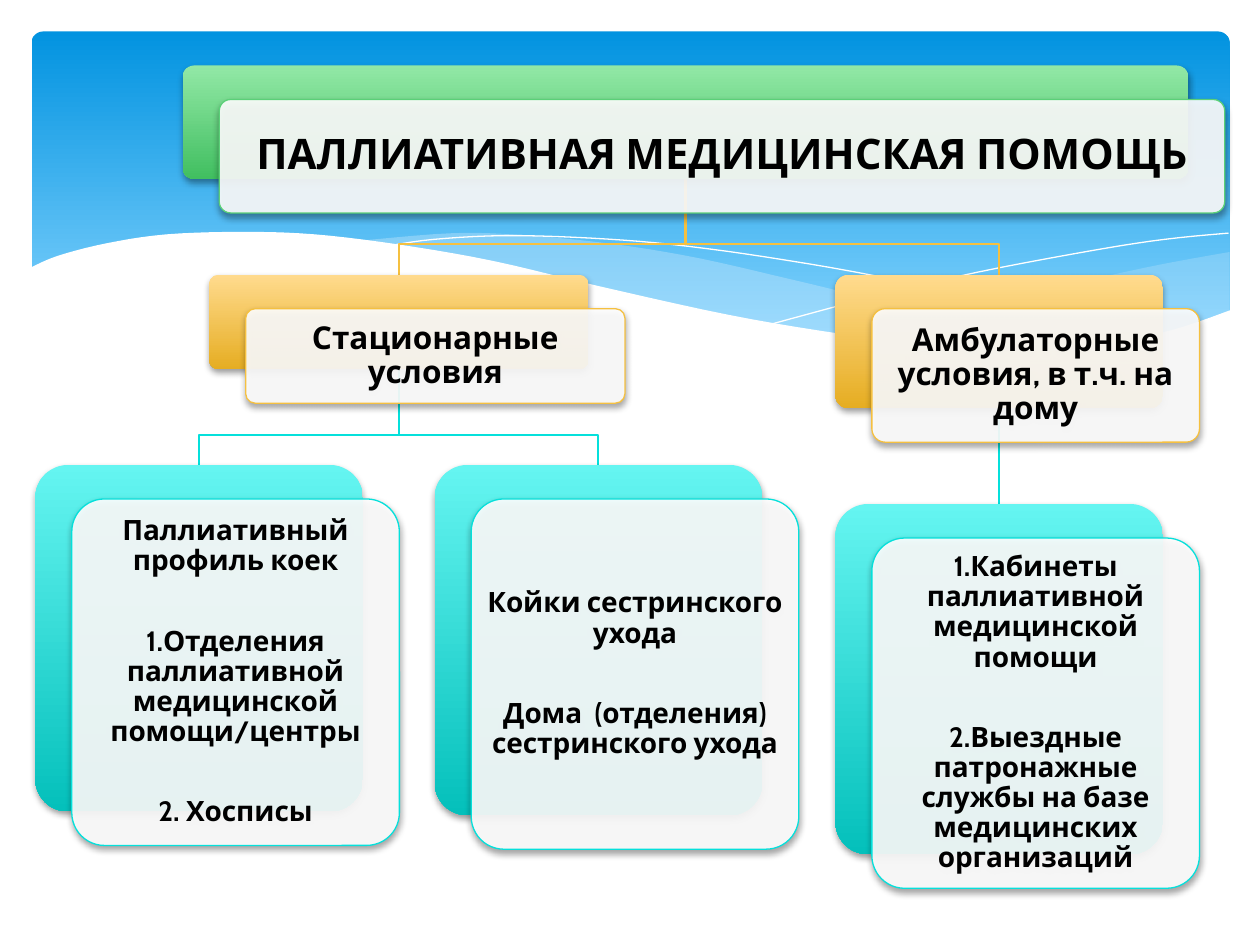
"""Build a one-slide chart of the kinds of palliative medical care."""
import pptx
import pptx.dml.color
import pptx.enum.shapes
import pptx.enum.text
import pptx.oxml
import pptx.oxml.ns
import pptx.util

Inches = pptx.util.Inches
Pt = pptx.util.Pt
RGBColor = pptx.dml.color.RGBColor
ROUNDED = pptx.enum.shapes.MSO_SHAPE.ROUNDED_RECTANGLE

WHITE = RGBColor(0xFF, 0xFF, 0xFF)
BLACK = RGBColor(0, 0, 0)
MIST = RGBColor(0xC6, 0xE7, 0xFC)
SKY = (RGBColor(0x02, 0x93, 0xE0), RGBColor(0x83, 0xD3, 0xFE))
GREEN = (RGBColor(0x92, 0xE8, 0xA6), RGBColor(0x41, 0xBF, 0x60), RGBColor(0x5B, 0xD0, 0x78))
GOLD = (RGBColor(0xFF, 0xDB, 0x8E), RGBColor(0xE6, 0xAD, 0x22), RGBColor(0xF5, 0xC0, 0x40))
TEAL = (RGBColor(0x65, 0xF5, 0xF1), RGBColor(0x04, 0xC0, 0xBB), RGBColor(0x05, 0xE0, 0xDB))
FONT = "Cabin"
CARD_OFFSET = (0.29, 0.27)
BEND_GAP = 0.24

TITLE = "ПАЛЛИАТИВНАЯ МЕДИЦИНСКАЯ ПОМОЩЬ"
CARDS = {
    "root": ((1.45, 0.52, 7.98, 0.9), GREEN, 24, []),
    "inpatient": ((1.66, 2.18, 3.01, 0.75), GOLD, 18, ["Стационарные условия"]),
    "beds": ((0.28, 3.69, 2.6, 2.75), TEAL, 16, [
        "Паллиативный профиль коек",
        "1.Отделения паллиативной медицинской помощи/центры",
        "2. Хосписы"]),
    "nursing": ((3.45, 3.69, 2.6, 2.78), TEAL, 16, [
        "Койки сестринского ухода",
        "Дома  (отделения) сестринского ухода"]),
    "outpatient": ((6.63, 2.18, 2.6, 1.06), GOLD, 18, ["Амбулаторные условия, в т.ч. на дому"]),
    "home": ((6.63, 4, 2.6, 2.78), TEAL, 16, [
        "1.Кабинеты паллиативной медицинской помощи",
        "2.Выездные патронажные службы на базе медицинских организаций"]),
}
LINKS = [("outpatient", "home"), ("root", "outpatient"), ("inpatient", "nursing"),
         ("inpatient", "beds"), ("root", "inpatient")]

RIGHT_WAVE = [
    [(9.76, 2), (9.21, 2.1), (8.61, 2.23), (7.79, 2.42), (7.06, 2.57), (6.61, 2.65)],
    [(6.61, 2.65), (7.05, 2.71), (7.57, 2.76), (8.14, 2.78), (8.72, 2.74), (9.28, 2.63), (9.76, 2.47)],
]
MIDDLE_WAVE = [
    [(8.93, 2.73), (8.07, 2.6), (7.06, 2.4), (6.29, 2.22), (5.55, 2.05), (4.89, 1.94),
     (4.2, 1.87), (3.61, 1.85), (2.86, 1.91)],
    [(2.86, 1.91), (3.62, 2.03), (4.49, 2.22), (5.3, 2.4), (6.18, 2.58), (6.95, 2.7),
     (7.61, 2.77), (8.18, 2.78), (8.93, 2.73)],
]
LONG_LINE = [(3.09, 1.95), (3.44, 1.9), (4.01, 1.87), (4.69, 1.89), (5.33, 1.94), (6.08, 2.04),
             (6.95, 2.19), (7.95, 2.41), (9.07, 2.72)]
SHORT_LINE = [(6.13, 2.57), (6.95, 2.35), (7.76, 2.16), (8.66, 1.99), (9.24, 1.9), (9.75, 1.85)]
PAGE_EDGE = [
    [(9.77, 2.46), (9.3, 2.62), (8.75, 2.73), (8.09, 2.77), (7.44, 2.74), (6.68, 2.65), (5.79, 2.5),
     (4.75, 2.27), (3.91, 2.07), (3.16, 1.94), (2.5, 1.86), (1.93, 1.84), (1.32, 1.86), (0.85, 1.93),
     (0.46, 2.03), (0.23, 2.13)],
    [(0.23, 3.29), (9.77, 3.29)],
]


def smooth_curve(points, steps=5):
    """Return points along a Catmull-Rom curve through the given points."""
    ends = [points[0], *points, points[-1]]
    curve = [points[0]]
    for a, b, c, d in zip(ends, ends[1:], ends[2:], ends[3:]):
        for step in range(1, steps + 1):
            t = step / steps
            curve.append(tuple(
                0.5 * (2 * q + (r - p) * t + (2 * p - 5 * q + 4 * r - s) * t ** 2
                       + (3 * q - p - 3 * r + s) * t ** 3)
                for p, q, r, s in zip(a, b, c, d)))
    return curve


def set_alpha(fill_parent, percent):
    """Make the first solid colour below an element partly transparent."""
    color = fill_parent.find(".//" + pptx.oxml.ns.qn("a:srgbClr"))
    color.append(pptx.oxml.parse_xml(
        f'<a:alpha {pptx.oxml.ns.nsdecls("a")} val="{percent * 1000}"/>'))


def add_outline(page, points, fill=None, alpha=100, line=None, width=0):
    """Draw a filled area or an open line through the points."""
    spots = [(Inches(x), Inches(y)) for x, y in points]
    builder = page.shapes.build_freeform(*spots[0])
    builder.add_line_segments(spots[1:], close=fill is not None)
    shape = builder.convert_to_shape()
    shape.shadow.inherit = False
    if fill is None:
        shape.fill.background()
        shape.line.color.rgb = line
        shape.line.width = Pt(width)
    else:
        shape.fill.solid()
        shape.fill.fore_color.rgb = fill
        set_alpha(shape.element.spPr, alpha)
        shape.line.fill.background()
    return shape


def add_panel(page, place, rounding, colors=None, last_stop=1.0):
    """Draw a rounded rectangle with a vertical gradient, or plain if no colours."""
    shape = page.shapes.add_shape(ROUNDED, *map(Inches, place))
    shape.adjustments[0] = rounding
    shape.shadow.inherit = False
    if colors:
        shape.fill.gradient()
        shape.fill.gradient_angle = 270
        for stop, color, position in zip(shape.fill.gradient_stops, colors, (0, last_stop)):
            stop.color.rgb = color
            stop.position = position
        shape.line.fill.background()
    return shape


def add_shadow(shape):
    effects = shape.element.spPr.find(pptx.oxml.ns.qn("a:effectLst"))
    effects.append(pptx.oxml.parse_xml(
        f'<a:outerShdw {pptx.oxml.ns.nsdecls("a")} blurRad="50800" dist="25400" dir="5400000" '
        'rotWithShape="0"><a:srgbClr val="000000"><a:alpha val="38000"/></a:srgbClr></a:outerShdw>'))


def write_text(shape, lines, size, inset):
    """Put centred bold paragraphs in a shape."""
    frame = shape.text_frame
    frame.text = "\n".join(lines)
    frame.word_wrap = True
    frame.auto_size = pptx.enum.text.MSO_AUTO_SIZE.NONE
    frame.vertical_anchor = pptx.enum.text.MSO_ANCHOR.MIDDLE
    frame.margin_left = frame.margin_right = frame.margin_top = frame.margin_bottom = Inches(inset)
    for index, para in enumerate(frame.paragraphs):
        para.alignment = pptx.enum.text.PP_ALIGN.CENTER
        para.line_spacing = 0.9
        para.space_before = Pt(28.5 if index else 0)
        for span in para.runs:
            span.font.name, span.font.size, span.font.bold = FONT, Pt(size), True
            span.font.color.rgb = BLACK


def add_card(page, place, colors, size, lines):
    """Draw a coloured card with a translucent text card over it; return both."""
    left, top, width, height = place
    back = add_panel(page, place, 0.1, colors[:2])
    front = add_panel(page, (left + CARD_OFFSET[0], top + CARD_OFFSET[1], width, height), 0.1)
    front.fill.solid()
    front.fill.fore_color.rgb = WHITE
    set_alpha(front.element.spPr, 90)
    front.line.color.rgb = colors[2]
    front.line.width = Pt(0.75)
    add_shadow(back)
    add_shadow(front)
    if lines:
        write_text(front, lines, size, max(0, 0.07 - 0.03 * min(width, height)))
    return back, front


def add_link(page, cards, parent, child):
    """Join the bottom of a parent card to the top of a child card."""
    (left, top, width, height), (child_left, child_top, child_width, _) = CARDS[parent][0], CARDS[child][0]
    start, end = (left + width / 2, top + height), (child_left + child_width / 2, child_top)
    color = CARDS[child][1][2]
    if start[0] == end[0]:
        link = page.shapes.add_connector(pptx.enum.shapes.MSO_CONNECTOR.STRAIGHT, 0, 0, 0, 0)
        link.begin_connect(cards[parent][0], 2)
        link.end_connect(cards[child][0], 0)
        link.line.color.rgb = color
        link.line.width = Pt(1.25)
        link.element.spPr.append(pptx.oxml.parse_xml(f'<a:effectLst {pptx.oxml.ns.nsdecls("a")}/>'))
    else:
        bend = child_top - BEND_GAP
        link = add_outline(page, [start, (start[0], bend), (end[0], bend), end], line=color, width=1.25)
    cards["root"][0].element.addprevious(link.element)


def main():
    deck = pptx.Presentation()
    deck.slide_width, deck.slide_height = Inches(10), Inches(7.5)
    page = deck.slides.add_slide(deck.slide_layouts[5])

    add_panel(page, (0.25, 0.25, 9.51, 2.7), 0.034, SKY, 0.9)
    for wave, alpha in ((RIGHT_WAVE, 29), (MIDDLE_WAVE, 40)):
        add_outline(page, [spot for side in wave for spot in smooth_curve(side)], MIST, alpha)
    for points in (LONG_LINE, SHORT_LINE):
        add_outline(page, smooth_curve(points), line=WHITE)
    add_outline(page, smooth_curve(PAGE_EDGE[0]) + PAGE_EDGE[1], WHITE)

    cards = {name: add_card(page, *card) for name, card in CARDS.items()}
    for parent, child in LINKS:
        add_link(page, cards, parent, child)

    title, front = page.shapes.title, cards["root"][1]
    title.left, title.top, title.width, title.height = front.left, front.top, front.width, front.height
    write_text(title, [TITLE], CARDS["root"][2], 0.1)
    front.element.addnext(title.element)
    deck.save("out.pptx")


if __name__ == "__main__":
    main()
